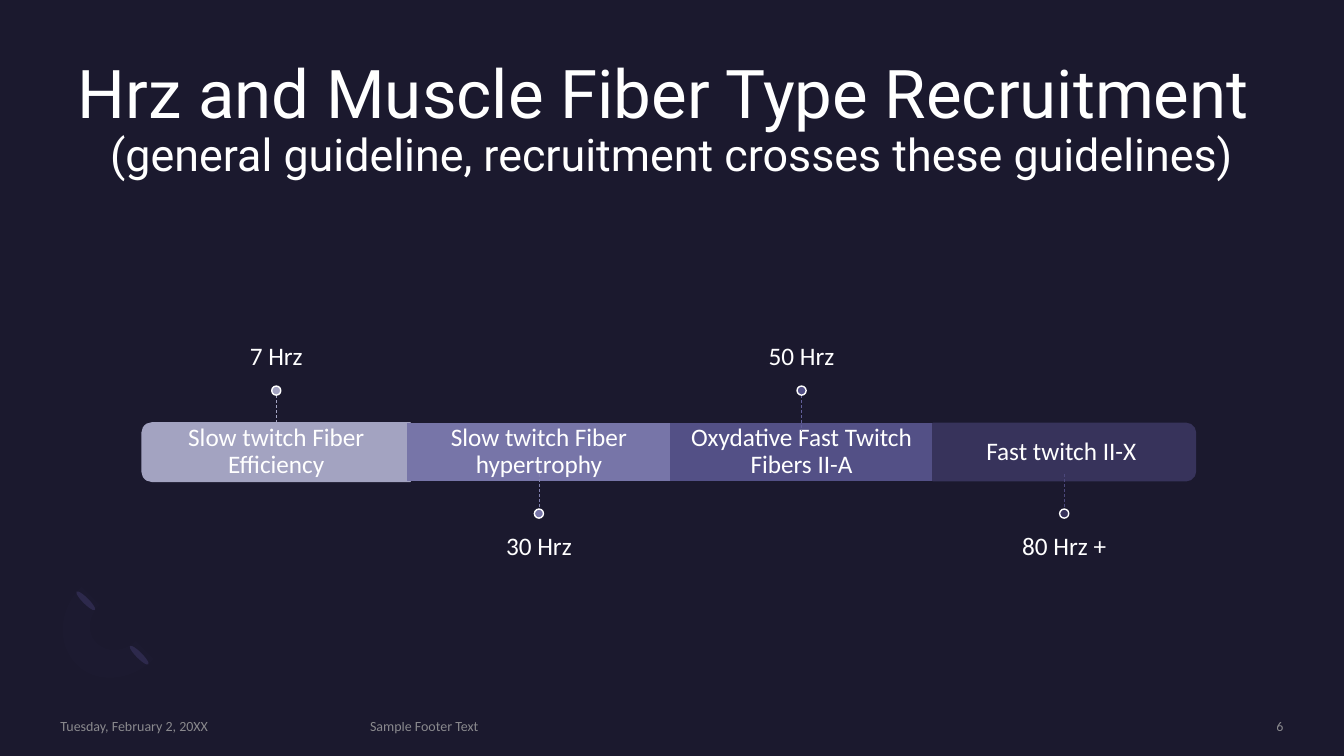
import pptx
import pptx.util
import pptx.dml.color
import pptx.enum.dml
import pptx.enum.shapes
import pptx.enum.text
from lxml import etree

Inches = pptx.util.Inches
Pt = pptx.util.Pt
SHAPE = pptx.enum.shapes.MSO_SHAPE
ALIGN = pptx.enum.text.PP_ALIGN
ANCHOR = pptx.enum.text.MSO_ANCHOR
DRAWING = "{http://schemas.openxmlformats.org/drawingml/2006/main}"

COLORS = {
    "background": "1B192E",
    "white": "FFFFFF",
    "footer": "A6A6A6",
    "petal": "2C284A",
    "ring": "7771B2",
}

# label, frequency, fill, connector colour, frequency above the bar
STAGES = [
    ("Slow twitch Fiber Efficiency", "7 Hrz", "A3A3C1", "A3A3C1", True),
    ("Slow twitch Fiber hypertrophy", "30 Hrz", "7775A8", "8281AE", False),
    ("Oxydative Fast Twitch Fibers II-A", "50 Hrz", "535086", "625F9A", True),
    ("Fast twitch II-X ", "80 Hrz +", "37335B", "4C487B", False),
]
FIRST_CENTER, STAGE_WIDTH, STAGE_HEIGHT, BAR_MIDDLE = 2.74, 2.605, 0.57, 4.485

FOOTERS = [
    ("Tuesday, February 2, 20XX", 0.6, 2.88, ALIGN.LEFT),
    ("Sample Footer Text", 3.67, 6.98, ALIGN.LEFT),
    ("6", 10.88, 1.85, ALIGN.RIGHT),
]

RING_START = (0.76, 6.59)
RING_SEGMENTS = [
    [(0.56, 6.39), (0.58, 6.05), (0.81, 5.82)],
    [(0.99, 6.0)],
    [(0.87, 6.11), (0.86, 6.29), (0.96, 6.38)],
    [(1.06, 6.48), (1.23, 6.47), (1.35, 6.36)],
    [(1.52, 6.54)],
    [(1.3, 6.76), (0.95, 6.79), (0.76, 6.59)],
]


def rgb(color):
    return pptx.dml.color.RGBColor.from_string(color)


def set_alpha(element, percent):
    """Make the first colour found inside the element partly transparent."""
    color = next(element.iter(DRAWING + "srgbClr"))
    etree.SubElement(color, DRAWING + "alpha", val=str(percent * 1000))


def style_shape(shape, fill, line=None):
    shape.shadow.inherit = False
    shape.fill.solid()
    shape.fill.fore_color.rgb = rgb(fill)
    if line:
        shape.line.color.rgb = rgb(line)
        shape.line.width = Pt(1)
    else:
        shape.line.fill.background()


def add_centered_shape(slide, kind, center, size, fill, line=None, rotation=0):
    (x, y), (width, height) = center, size
    shape = slide.shapes.add_shape(kind, Inches(x - width / 2), Inches(y - height / 2),
                                   Inches(width), Inches(height))
    shape.rotation = rotation
    style_shape(shape, fill, line)


def add_text(slide, box, lines, color=COLORS["white"], font="Calibri", align=ALIGN.CENTER,
             anchor=ANCHOR.TOP, insets=(0, 0, 0, 0), spacing=0.9, alpha=None):
    """Add one paragraph whose (text, size) lines are parted by line breaks."""
    frame = slide.shapes.add_textbox(*map(Inches, box)).text_frame
    left, top, right, bottom = map(Inches, insets)
    frame_format = {"word_wrap": True, "vertical_anchor": anchor, "margin_left": left,
                    "margin_top": top, "margin_right": right, "margin_bottom": bottom}
    for name, value in frame_format.items():
        setattr(frame, name, value)
    paragraph = frame.paragraphs[0]
    paragraph.alignment = align
    paragraph.line_spacing = spacing
    for index, (text, size) in enumerate(lines):
        if index:
            paragraph.add_line_break()
        run = paragraph.add_run()
        run.text = text
        run.font.name = font
        run.font.size = Pt(size)
        run.font.color.rgb = rgb(color)
        if alpha:
            set_alpha(run._r, alpha)


def add_dashed_line(slide, x, top, bottom, color):
    line = slide.shapes.add_connector(pptx.enum.shapes.MSO_CONNECTOR.STRAIGHT,
                                      Inches(x), Inches(top), Inches(x), Inches(bottom))
    line.line.color.rgb = rgb(color)
    line.line.width = Pt(0.5)
    line.line.dash_style = pptx.enum.dml.MSO_LINE.DASH
    etree.SubElement(line._element.spPr, DRAWING + "effectLst")


def curve_points(start, controls, steps=12):
    """Return points along a cubic curve, or the end of a straight side."""
    if len(controls) == 1:
        return controls
    corners = [start] + controls
    points = []
    for step in range(1, steps + 1):
        t = step / steps
        weights = ((1 - t) ** 3, 3 * t * (1 - t) ** 2, 3 * t * t * (1 - t), t ** 3)
        points.append(tuple(sum(w * corner[axis] for w, corner in zip(weights, corners))
                            for axis in (0, 1)))
    return points


def add_ornament(slide):
    for center in ((1.38, 6.5), (0.85, 5.96)):
        add_centered_shape(slide, SHAPE.OVAL, center, (0.06, 0.26), COLORS["petal"], rotation=135)
    points, start = [], RING_START
    for controls in RING_SEGMENTS:
        points += curve_points(start, controls)
        start = controls[-1]
    builder = slide.shapes.build_freeform(*map(Inches, RING_START))
    builder.add_line_segments([(Inches(x), Inches(y)) for x, y in points], close=True)
    ring = builder.convert_to_shape()
    style_shape(ring, COLORS["ring"])
    set_alpha(ring._element.spPr, 2)


def add_stage(slide, index, label, frequency, fill, line_color, above):
    x = FIRST_CENTER + index * STAGE_WIDTH
    size = (STAGE_WIDTH, STAGE_HEIGHT)
    if index == 0:
        add_centered_shape(slide, SHAPE.ROUND_2_SAME_RECTANGLE, (x, BAR_MIDDLE),
                           (0.58, 2.66), fill, fill, 270)
    elif index == len(STAGES) - 1:
        add_centered_shape(slide, SHAPE.ROUND_2_SAME_RECTANGLE, (x, BAR_MIDDLE),
                           size[::-1], fill, fill, 90)
    else:
        add_centered_shape(slide, SHAPE.RECTANGLE, (x, BAR_MIDDLE), size, fill, fill)
    add_text(slide, (x - STAGE_WIDTH / 2, BAR_MIDDLE - STAGE_HEIGHT / 2, *size), [(label, 18)],
             anchor=ANCHOR.MIDDLE, insets=(0.15,) * 4)

    if above:
        text_top, anchor, insets = 2.31, ANCHOR.BOTTOM, (0, 0, 0, 0.15)
        line_top, dot_middle = 3.92, 3.875
    else:
        text_top, anchor, insets = 5.14, ANCHOR.TOP, (0, 0.15, 0, 0)
        line_top, dot_middle = 4.7, 5.095
    add_text(slide, (x - 2.17, text_top, 4.34, 1.52), [(frequency, 18)],
             anchor=anchor, insets=insets)
    add_dashed_line(slide, x, line_top, line_top + 0.35, line_color)
    add_centered_shape(slide, SHAPE.OVAL, (x, dot_middle), (0.09, 0.09), fill, COLORS["white"])


def main():
    presentation = pptx.Presentation()
    presentation.slide_width = Inches(13.33)
    presentation.slide_height = Inches(7.5)
    slide = presentation.slides.add_slide(presentation.slide_layouts[6])
    slide.background.fill.solid()
    slide.background.fill.fore_color.rgb = rgb(COLORS["background"])

    add_ornament(slide)
    add_text(slide, (0.6, 0.6, 12.13, 1.46),
             [("Hrz and Muscle Fiber Type Recruitment ", 48),
              ("(general guideline, recruitment crosses these guidelines)", 32)], font="Roboto")
    for index, stage in enumerate(STAGES):
        add_stage(slide, index, *stage)
    for text, left, width, align in FOOTERS:
        add_text(slide, (left, 7.12, width, 0.17), [(text, 10)], COLORS["footer"],
                 align=align, anchor=ANCHOR.MIDDLE, spacing=1.0, alpha=80)
    presentation.save("out.pptx")


if __name__ == "__main__":
    main()
